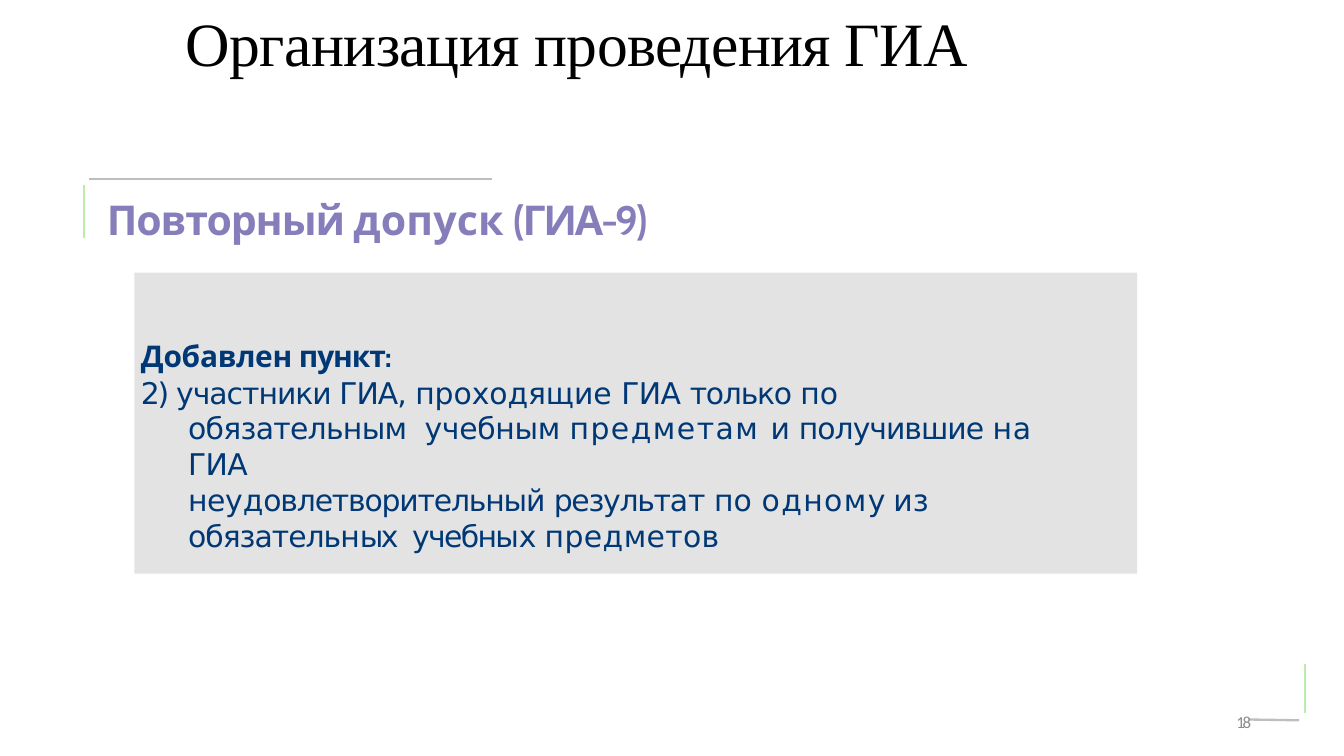
from pptx import Presentation
from pptx.dml.color import RGBColor
from pptx.enum.shapes import MSO_CONNECTOR as Link, MSO_SHAPE as Preset
from pptx.enum.text import MSO_ANCHOR as Anchor, MSO_AUTO_SIZE as Fit, PP_ALIGN as Align
from pptx.oxml.ns import qn
from pptx.util import Cm, Pt
from lxml.etree import SubElement

COLORS = {
    "green": "BAECAB", "grey": "BEBEBE", "violet": "857EBA", "black": "000000",
    "number": "8C8C8C", "panel": "E3E3E3", "navy": "003876",
}
RULES = [
    (3.18, 6.98, 3.18, 9.0, "green"),
    (3.38, 6.76, 18.59, 6.76, "grey"),
    (49.33, 25.1, 49.33, 26.95, "green"),
    (47.19, 27.2, 49.1, 27.23, "grey"),
]
TITLE = [("Организация ", -0.6), ("проведения ГИА", -0.8)]
HEADING = [("Повторный ", -1.2), ("допуск ", 0.2), ("(ГИА-9)", -2.4)]
NUMBER = [("18", -2.5)]
ADDED = [("Добавлен ", -0.3), ("пункт:", -1.2)]
CLAUSE = [
    ("2) ", -2.7), ("участники ГИА, ", -1.1), ("проходящие ", -0.1), ("ГИА ", -0.7),
    ("только ", -1.4), ("по ", 0.1), ("обязательным", -0.8), (" ", 8.6),
    ("учебным ", -0.4), ("предметам ", 1.6), ("и ", -0.8), ("получившие ", -1.1),
    ("на ", 0.7), ("ГИА", -0.7),
]
RESULT = [
    ("неу", -0.5), ("д", -0.4), ("овлетворительный ", -1.3), ("результа", -1.4),
    ("т ", -1.1), ("по ", 0.1), ("одно", 1.4), ("м", 1.6), ("у ", -1.8), ("и", -2.2),
    ("з ", -1.8), ("обязательн", -1.1), ("ых", -2.9), (" ", 4.4),
    ("учебны", -1.8), ("х ", -1.6), ("пре", 0.4), ("д", 0.5), ("метов", 0.3),
]
BODY = {"name": "DejaVu Sans", "size": Pt(32), "bold": False}


def assign(target, values):
    for name, value in values.items():
        setattr(target, name, value)


def set_frame(box, top=0.03, right=0, anchor=Anchor.TOP):
    assign(box.text_frame, {
        "word_wrap": True, "auto_size": Fit.NONE, "vertical_anchor": anchor,
        "margin_left": 0, "margin_right": Cm(right), "margin_top": Cm(top), "margin_bottom": 0,
    })


def write(para, spans, font, color, layout, left=0.03, indent=0):
    assign(para, {"alignment": Align.LEFT, "space_before": Pt(0), "space_after": Pt(0), **layout})
    properties = para._p.get_or_add_pPr()
    properties.set("marL", str(Cm(left)))
    properties.set("indent", str(Cm(indent)))
    for text, spacing in spans:
        span = para.add_run()
        span.text = text
        assign(span.font, font)
        span.font.color.rgb = RGBColor.from_string(COLORS[color])
        span._r.get_or_add_rPr().set("spc", str(round(spacing * 100)))


def add_rule(page, x1, y1, x2, y2, color):
    rule = page.shapes.add_connector(Link.STRAIGHT, Cm(x1), Cm(y1), Cm(x2), Cm(y2))
    rule.line.color.rgb = RGBColor.from_string(COLORS[color])
    rule.line.width = Pt(2.5)
    SubElement(rule._element.spPr, qn("a:effectLst"))


def add_panel(page):
    panel = page.shapes.add_shape(Preset.RECTANGLE, Cm(5.08), Cm(10.31), Cm(37.9), Cm(11.38))
    panel.shadow.inherit = False
    panel.fill.solid()
    panel.fill.fore_color.rgb = RGBColor.from_string(COLORS["panel"])
    panel.line.fill.background()
    set_frame(panel, top=2.44, right=3.25)
    frame = panel.text_frame
    pitch = {"line_spacing": Pt(38.4)}
    write(frame.paragraphs[0], ADDED, {**BODY, "name": "Cabin", "bold": True}, "navy", pitch, 0.25)
    write(frame.add_paragraph(), CLAUSE, BODY, "navy", {**pitch, "space_before": Pt(1.2)}, 2.03, -1.78)
    write(frame.add_paragraph(), RESULT, BODY, "navy", pitch, 2.03)


def main():
    deck = Presentation()
    deck.slide_width, deck.slide_height = Cm(50.8), Cm(28.58)
    page = deck.slides.add_slide(deck.slide_layouts[5])

    for rule in RULES:
        add_rule(page, *rule)

    heading = page.shapes.add_textbox(Cm(4.01), Cm(7.34), Cm(21.01), Cm(1.93))
    set_frame(heading)
    write(heading.text_frame.paragraphs[0], HEADING,
          {"name": "Cabin", "size": Pt(44), "bold": True}, "violet", {"space_before": Pt(1)})

    title = page.shapes.title
    assign(title, {"left": Cm(6.99), "top": Cm(0.13), "width": Cm(32.16), "height": Cm(2.87)})
    set_frame(title, anchor=Anchor.MIDDLE)
    write(title.text_frame.paragraphs[0], TITLE,
          {"name": "Times New Roman", "size": Pt(66)}, "black", {"space_before": Pt(1.1)})

    number = page.shapes.add_textbox(Cm(35.86), Cm(26.49), Cm(11.43), Cm(1.52))
    set_frame(number, top=0.05, anchor=Anchor.MIDDLE)
    write(number.text_frame.paragraphs[0], NUMBER, {"name": "Calibri", "size": Pt(18)}, "number",
          {"alignment": Align.RIGHT, "space_before": Pt(1.2)}, 0.1)

    add_panel(page)
    deck.save("out.pptx")


if __name__ == "__main__":
    main()
